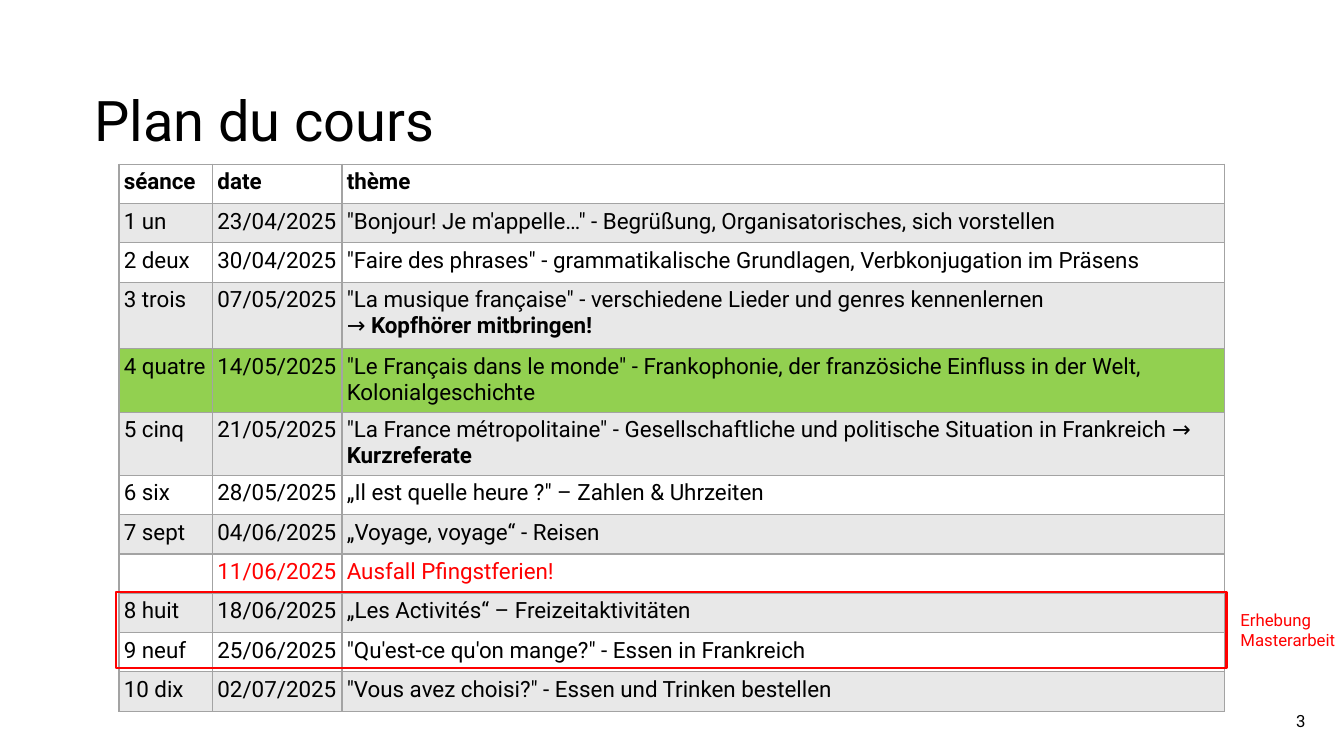
from lxml import etree
from pptx import Presentation
from pptx import util as u
from pptx.dml.color import RGBColor
from pptx.enum import shapes, text
from pptx.oxml.ns import qn

BLACK, WHITE, RED = "000000", "FFFFFF", "FF0000"
GREY, GREEN, EDGE = "E8E8E8", "92D050", "A3A3A3"
FONT = "Roboto"
WIDE, HIGH = 33.87, 19.05
LEFT, TOP = 3.0, 4.14
COLS = [2.36, 3.26, 22.24]
ROW, TALL = 0.99, {3: 1.68, 4: 1.55, 5: 1.55}
HEAD = ["séance", "date", "thème"]
PLAN = [
    ("1 un", "23/04/2025", "\"Bonjour! Je m'appelle…\" - Begrüßung, Organisatorisches, sich vorstellen"),
    ("2 deux", "30/04/2025", "\"Faire des phrases\" - grammatikalische Grundlagen, Verbkonjugation im Präsens"),
    ("3 trois", "07/05/2025", "\"La musique française\" - verschiedene Lieder und genres kennenlernen\n→ **Kopfhörer mitbringen!"),
    ("4 quatre", "14/05/2025", "\"Le Français dans le monde\" - Frankophonie, der französiche Einfluss in der Welt, Kolonialgeschichte"),
    ("5 cinq", "21/05/2025", "\"La France métropolitaine\" - Gesellschaftliche und politische Situation in Frankreich → **Kurzreferate"),
    ("6 six", "28/05/2025", "„Il est quelle heure ?\" – Zahlen & Uhrzeiten"),
    ("7 sept", "04/06/2025", "„Voyage, voyage“ - Reisen"),
    ("", "11/06/2025", "Ausfall Pfingstferien!"),
    ("8 huit", "18/06/2025", "„Les Activités“ – Freizeitaktivitäten"),
    ("9 neuf", "25/06/2025", "\"Qu'est-ce qu'on mange?\" - Essen in Frankreich"),
    ("10 dix", "02/07/2025", "\"Vous avez choisi?\" - Essen und Trinken bestellen"),
]
NOW, OFF = 4, 8


def paint(part, tone):
    part.rgb = RGBColor.from_string(tone)


def fill(item, tone):
    item.fill.solid()
    paint(item.fill.fore_color, tone)


def write(frame, words, size, tone=BLACK, bold=False):
    for n, line in enumerate(words.split("\n")):
        para = frame.add_paragraph() if n else frame.paragraphs[0]
        for k, part in enumerate(line.split("**")):
            if not part:
                etree.SubElement(para._p, qn("a:endParaRPr"), sz=str(size * 100))
                continue
            run = para.add_run()
            run.text = part
            run.font.name, run.font.size = FONT, u.Pt(size)
            run.font.bold = bold or k > 0
            paint(run.font.color, tone)
    return para


def box(x, y, w, h, words, size, tone=BLACK, mid=True):
    frame = slide.shapes.add_textbox(*map(u.Cm, (x, y, w, h))).text_frame
    frame.word_wrap = True
    if mid:
        frame.vertical_anchor = text.MSO_ANCHOR.MIDDLE
    return write(frame, words, size, tone)


def rect(x, y, w, h):
    form = slide.shapes.add_shape(shapes.MSO_SHAPE.RECTANGLE, *map(u.Cm, (x, y, w, h)))
    form.shadow.inherit = False
    return form


def edge(cell):
    props = cell._tc.get_or_add_tcPr()
    for side in ("lnL", "lnR", "lnT", "lnB"):
        line = etree.SubElement(props, qn("a:" + side), w="12700")
        solid = etree.SubElement(line, qn("a:solidFill"))
        etree.SubElement(solid, qn("a:srgbClr"), val=EDGE)


deck = Presentation()
deck.slide_width, deck.slide_height = u.Cm(WIDE), u.Cm(HIGH)
slide = deck.slides.add_slide(deck.slide_layouts[6])

band = rect(0, 0, WIDE, 4.72)
fill(band, WHITE)
band.line.fill.background()
box(2.13, 1.5, 29.11, 3.23, "Plan du cours", 40).line_spacing = 0.9
box(24.26, 17.65, 8.89, 1.02, "3", 12).alignment = text.PP_ALIGN.RIGHT

rows = [HEAD] + PLAN
tall = [TALL.get(r, ROW) for r in range(len(rows))]
grid = slide.shapes.add_table(
    len(rows), len(COLS), *map(u.Cm, (LEFT, TOP, sum(COLS), sum(tall)))).table
for col, wide in zip(grid.columns, COLS):
    col.width = u.Cm(wide)
for r, row in enumerate(rows):
    grid.rows[r].height = u.Cm(tall[r])
    striped = r % 2 == 1
    tone = GREEN if r == NOW else GREY if striped else WHITE
    for c, words in enumerate(row):
        cell = grid.cell(r, c)
        cell.margin_left = cell.margin_right = u.Cm(0.12)
        cell.margin_top = cell.margin_bottom = u.Cm(0.12)
        edge(cell)
        fill(cell, tone)
        write(cell.text_frame, words, 16, RED if r == OFF else BLACK, r == 0)

frame = rect(2.92, 14.91, 27.99, 1.93)
frame.fill.background()
paint(frame.line.color, RED)
frame.line.width = u.Pt(1.5)
box(31.01, 15.24, 3.33, 1.27, "Erhebung Masterarbeit", 12, RED, False)

deck.save("out.pptx")
